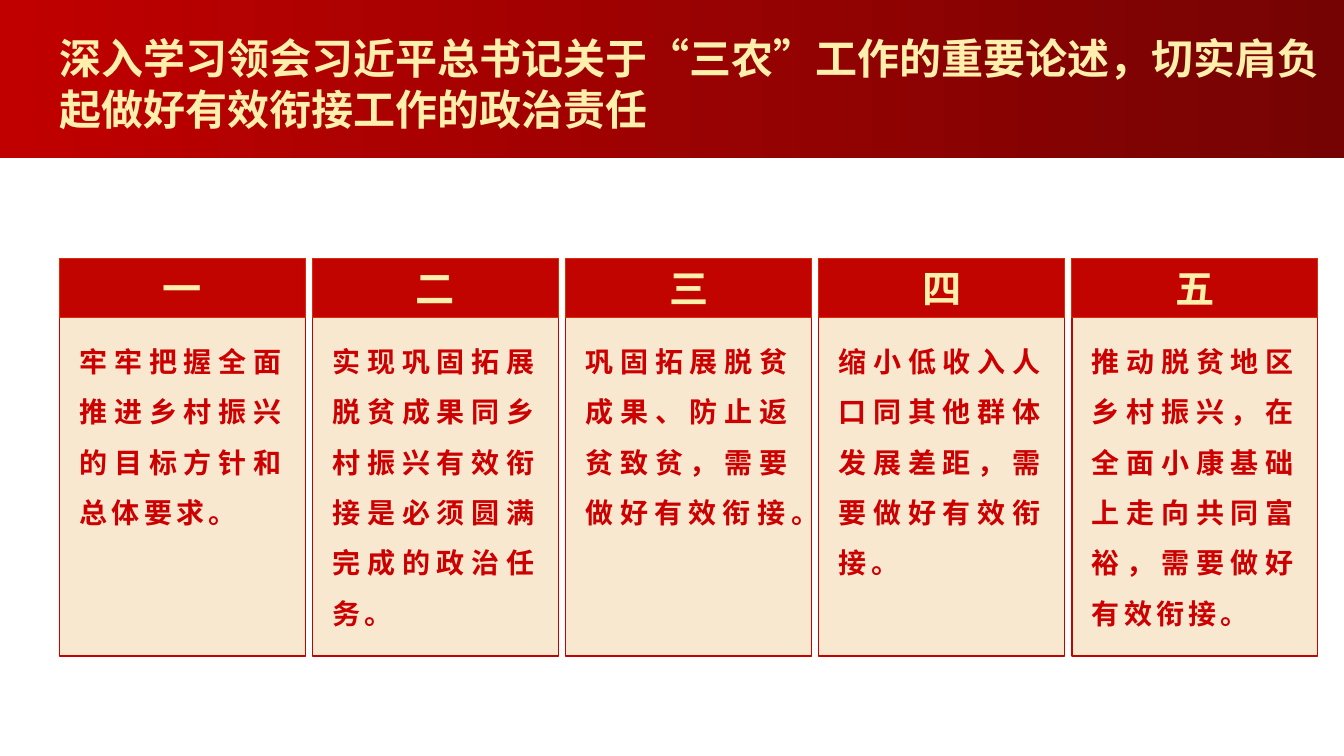
from pptx import Presentation
from pptx.dml.color import RGBColor
from pptx.enum.shapes import MSO_SHAPE
from pptx.enum.text import MSO_ANCHOR, PP_ALIGN
from pptx.oxml.ns import qn
from pptx.util import Inches, Pt
from lxml.etree import SubElement

THEME = {
    "font": "Noto Sans CJK SC",
    "red": RGBColor.from_string("C20400"),
    "edge": RGBColor.from_string("DC2C00"),
    "cream": RGBColor.from_string("F9E8D0"),
    "gold": RGBColor.from_string("FEEFAC"),
    "ink": RGBColor.from_string("CC0000"),
    "band": ("C00000", "760303"),
    "title": 30, "head": 28, "body": 20,
}
CARDS = [
    ("一", "牢牢把握全面推进乡村振兴的目标方针和总体要求。"),
    ("二", "实现巩固拓展脱贫成果同乡村振兴有效衔接是必须圆满完成的政治任务。"),
    ("三", "巩固拓展脱贫成果、防止返贫致贫，需要做好有效衔接。"),
    ("四", "缩小低收入人口同其他群体发展差距，需要做好有效衔接。"),
    ("五", "推动脱贫地区乡村振兴，在全面小康基础上走向共同富裕，需要做好有效衔接。"),
]

deck = Presentation()
deck.slide_width, deck.slide_height = Inches(13.33), Inches(7.5)
slide = deck.slides.add_slide(deck.slide_layouts[6])


def place(left, top, wide, high):
    return [int(share * side / 100) for share, side in zip(
        (left, top, wide, high), (deck.slide_width, deck.slide_height) * 2)]


def write(shape, text, size, tint, frame, para, gap=0):
    box = shape.text_frame
    box.word_wrap = True
    line = box.paragraphs[0]
    run = line.add_run()
    run.text = text
    face = {"size": Pt(size), "bold": True, "name": THEME["font"]}
    for item, form in ((box, frame), (line, para), (run.font, face)):
        for key, value in form.items():
            setattr(item, key, value)
    run.font.color.rgb = tint
    props = run.font._element
    SubElement(props, qn("a:ea")).set("typeface", THEME["font"])
    if gap:
        props.set("spc", str(gap * 100))


band = slide.shapes.add_shape(MSO_SHAPE.RECTANGLE, *place(0, 0, 100, 20.93))
band.shadow.inherit = False
band.line.fill.background()
band.fill.gradient()
band.fill.gradient_angle = 0
for stop, tint in zip(band.fill.gradient_stops, THEME["band"]):
    stop.color.rgb = RGBColor.from_string(tint)

title = slide.shapes.add_textbox(*place(0, 3.2, 100, 15.6))
write(title, "深入学习领会习近平总书记关于“三农”工作的重要论述，切实肩负起做好有效衔接工作的政治责任",
      THEME["title"], THEME["gold"],
      {"vertical_anchor": MSO_ANCHOR.MIDDLE, "margin_left": Inches(0.59),
       "margin_right": Inches(0.2), "margin_top": Inches(0.08),
       "margin_bottom": Inches(0.08)}, {"alignment": PP_ALIGN.LEFT})

START, STEP, WIDE = 4.43, 18.83, 18.3
for col, (head, body) in enumerate(CARDS):
    left = START + col * STEP
    card = slide.shapes.add_group_shape().shapes
    panel = card.add_shape(MSO_SHAPE.FLOWCHART_PROCESS, *place(left, 34.27, WIDE, 52.53))
    label = card.add_shape(MSO_SHAPE.RECTANGLE, *place(left, 34.13, WIDE, 7.87))
    for shape, fill, edge, thick in ((panel, "cream", "red", 1), (label, "red", "edge", 0.75)):
        shape.shadow.inherit = False
        shape.fill.solid()
        shape.fill.fore_color.rgb = THEME[fill]
        shape.line.color.rgb = THEME[edge]
        shape.line.width = Pt(thick)
    write(label, head, THEME["head"], THEME["gold"],
          {"vertical_anchor": MSO_ANCHOR.MIDDLE}, {"alignment": PP_ALIGN.CENTER}, 3)
    note = card.add_textbox(*place(left, 42.67, WIDE, 43.07))
    write(note, body, THEME["body"], THEME["ink"],
          {"margin_left": Inches(0.2), "margin_right": Inches(0.2)},
          {"alignment": PP_ALIGN.JUSTIFY, "line_spacing": 1.5}, 3)

deck.save("out.pptx")
